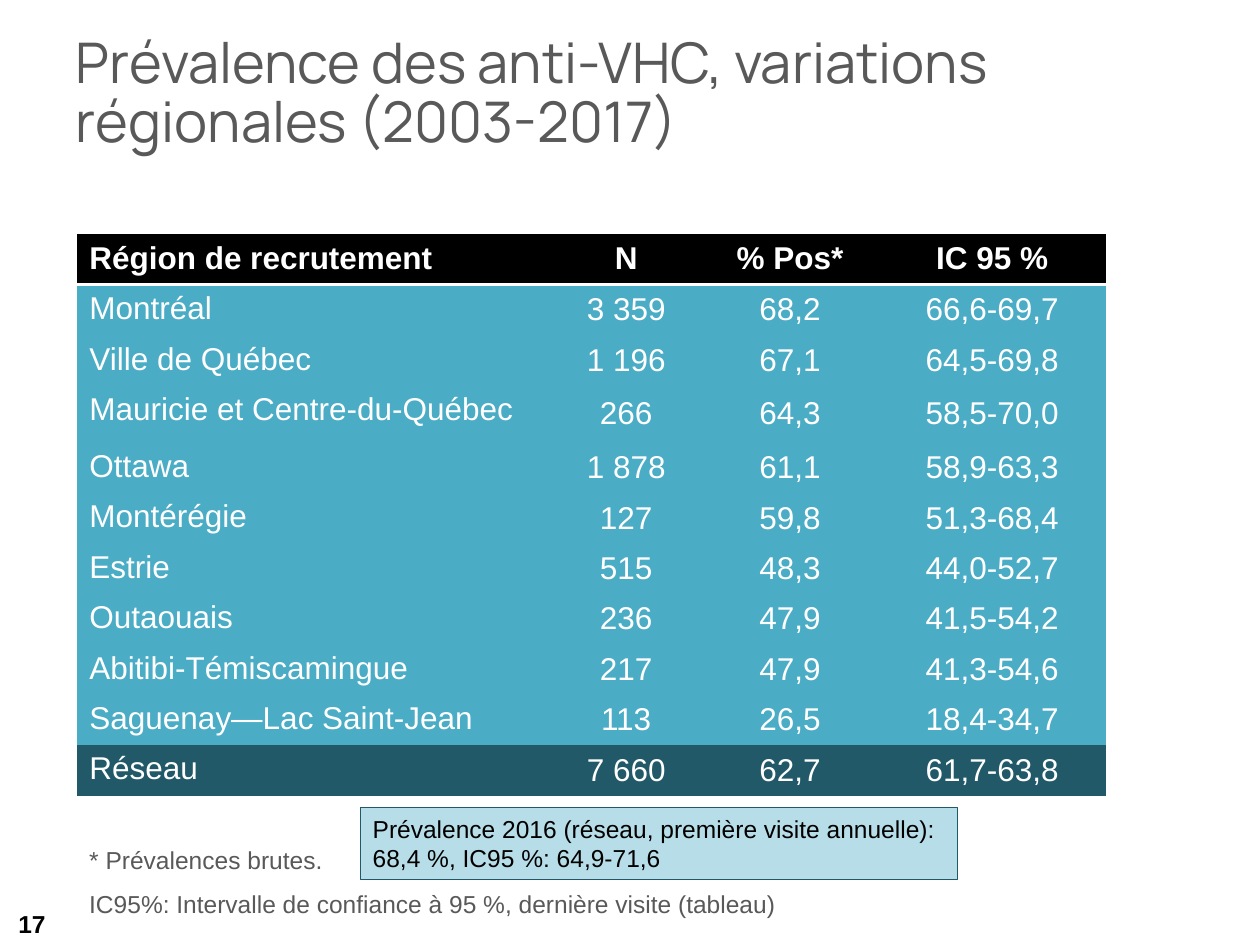
from lxml.etree import SubElement
from pptx import Presentation
from pptx.dml.color import RGBColor
from pptx.enum.shapes import MSO_SHAPE
from pptx.enum.text import MSO_ANCHOR, PP_ALIGN
from pptx.oxml.ns import qn
from pptx.util import Inches, Pt

# Content
TITLE = "Prévalence des anti-VHC, variations régionales (2003-2017)"
HEADER = ("Région de recrutement", "N", "% Pos*", "IC 95 %")
REGIONS = [
    ("Montréal", "3 359", "68,2", "66,6-69,7"),
    ("Ville de Québec", "1 196", "67,1", "64,5-69,8"),
    ("Mauricie et Centre-du-Québec", "266", "64,3", "58,5-70,0"),
    ("Ottawa", "1 878", "61,1", "58,9-63,3"),
    ("Montérégie", "127", "59,8", "51,3-68,4"),
    ("Estrie", "515", "48,3", "44,0-52,7"),
    ("Outaouais", "236", "47,9", "41,5-54,2"),
    ("Abitibi-Témiscamingue", "217", "47,9", "41,3-54,6"),
    ("Saguenay—Lac Saint-Jean", "113", "26,5", "18,4-34,7"),
]
NETWORK = ("Réseau", "7 660", "62,7", "61,7-63,8")
NOTES = [
    "* Prévalences brutes.",
    "IC95%: Intervalle de confiance à 95 %, dernière visite (tableau)",
]
CALLOUT = [
    "Prévalence 2016 (réseau, première visite annuelle):",
    "68,4\u00a0%, IC95 %: 64,9-71,6",
]
PAGE = "17"

# Style
BLACK, WHITE, GREY = "000000", "FFFFFF", "595959"
TEAL, DARK_TEAL, PALE_TEAL = "4BACC6", "215968", "B7DEE8"
COLUMN_WIDTHS = (3.76, 1.2, 1.4, 1.81)
ROW_HEIGHT, TALL_ROW_HEIGHT, TALL_ROW = 0.4, 0.45, 3
NO_STYLE = "{2D5ABB26-0587-4C30-8999-92F81FD0307C}"


def color(value):
    return RGBColor.from_string(value)


def write(frame, lines, size, hue, font="Arial", bold=False, align=PP_ALIGN.LEFT):
    frame.text = "\n".join(lines)
    for paragraph in frame.paragraphs:
        paragraph.alignment = align
        for run in paragraph.runs:
            run.font.size = Pt(size)
            run.font.name = font
            run.font.bold = bold
            run.font.color.rgb = color(hue)


def box(left, top, width, height):
    return [Inches(length) for length in (left, top, width, height)]


def bottom_border(cell, hue, width):
    # The border has to come before the fill in the cell properties
    properties = cell._tc.get_or_add_tcPr()
    line = SubElement(properties, qn("a:lnB"), w=str(Pt(width)))
    fill = SubElement(line, qn("a:solidFill"))
    SubElement(fill, qn("a:srgbClr"), val=hue)
    properties.insert(0, line)


prs = Presentation()
prs.slide_width, prs.slide_height = Inches(10), Inches(7.5)
slide = prs.slides.add_slide(prs.slide_layouts[5])

# Title
title = slide.shapes.title
title.left, title.top, title.width, title.height = box(0.5, 0.13, 9, 1.25)
write(title.text_frame, [TITLE], 32, GREY, font="Manrope")
title.text_frame.vertical_anchor = MSO_ANCHOR.MIDDLE
title.text_frame.paragraphs[0].line_spacing = 0.88

# Page number
page = slide.shapes.add_textbox(*box(-0.02, 7.13, 0.48, 0.4)).text_frame
page.word_wrap = True
page.vertical_anchor = MSO_ANCHOR.MIDDLE
write(page, [PAGE], 14, BLACK, bold=True, align=PP_ALIGN.RIGHT)

# Prevalence table
rows = [HEADER, *REGIONS, NETWORK]
fills = [BLACK] + [TEAL] * len(REGIONS) + [DARK_TEAL]
heights = [TALL_ROW_HEIGHT if i == TALL_ROW else ROW_HEIGHT for i in range(len(rows))]
table = slide.shapes.add_table(
    len(rows), len(HEADER), *box(0.61, 1.86, sum(COLUMN_WIDTHS), sum(heights))
).table
table.horz_banding = False
table._tbl.tblPr.find(qn("a:tableStyleId")).text = NO_STYLE
for column, width in zip(table.columns, COLUMN_WIDTHS):
    column.width = Inches(width)

for r, values in enumerate(rows):
    table.rows[r].height = Inches(heights[r])
    is_header = r == 0
    for c, value in enumerate(values):
        cell = table.cell(r, c)
        is_figure = c > 0
        write(cell.text_frame, [value], 18, WHITE, bold=is_header,
              align=PP_ALIGN.CENTER if is_figure else PP_ALIGN.LEFT)
        cell.fill.solid()
        cell.fill.fore_color.rgb = color(fills[r])
        if is_header:
            bottom_border(cell, WHITE, 2)
        elif is_figure:
            cell.vertical_anchor = MSO_ANCHOR.MIDDLE
            cell.margin_top = cell.margin_bottom = Inches(0.04)

# Footnotes
notes = slide.shapes.add_textbox(*box(0.61, 6.66, 7.14, 0.69)).text_frame
notes.word_wrap = True
write(notes, NOTES, 14, GREY)
for i, note in enumerate(notes.paragraphs):
    indents = note._p.get_or_add_pPr()
    indents.set("marL", str(Inches(0.19)))
    indents.set("indent", str(Inches(-0.19)))
    if i:
        note.space_before = Pt(8)

# Callout on the 2016 prevalence
callout = slide.shapes.add_shape(MSO_SHAPE.RECTANGLE, *box(2.86, 6.41, 4.74, 0.57))
callout.shadow.inherit = False
callout.fill.solid()
callout.fill.fore_color.rgb = color(PALE_TEAL)
callout.line.color.rgb = color(DARK_TEAL)
callout.line.width = Pt(0.75)
callout.text_frame.word_wrap = False
callout.text_frame.vertical_anchor = MSO_ANCHOR.TOP
write(callout.text_frame, CALLOUT, 14, BLACK)

prs.save("out.pptx")
